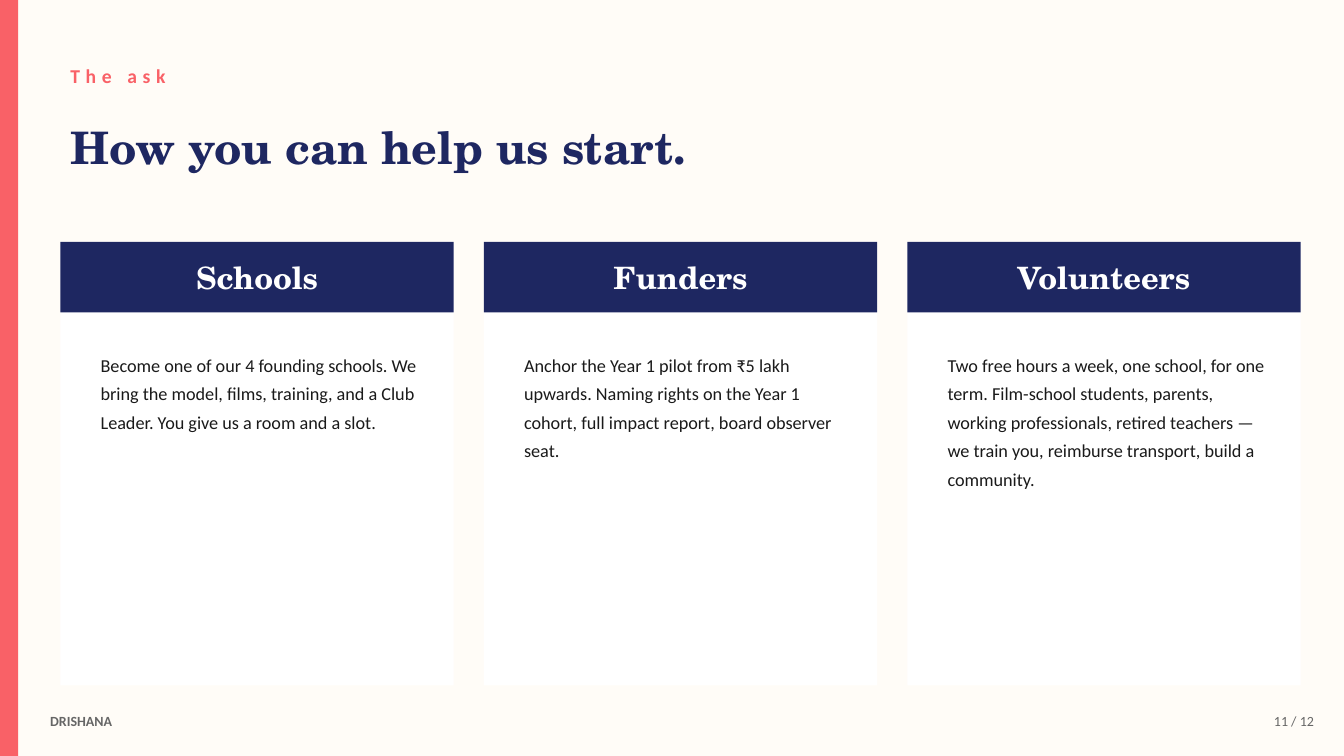
from pptx import Presentation
from pptx.dml.color import RGBColor
from pptx.enum import shapes, text
from pptx.util import Inches, Pt

CORAL, NAVY, WHITE, CREAM = "F96167", "1E2761", "FFFFFF", "FFFCF7"
INK, GREY = "1A1A1A", "666666"
SERIF, SANS = "TeX Gyre Schola", "Calibri"
WIDTH, HEIGHT = 13.33, 7.5

EYEBROW = {"name": SANS, "size": Pt(14), "bold": True, "color": CORAL}
TITLE = {"name": SERIF, "size": Pt(32), "bold": True, "color": NAVY}
CARD_HEAD = {"name": SERIF, "size": Pt(22), "bold": True, "color": WHITE}
CARD_BODY = {"name": SANS, "size": Pt(13), "color": INK}
FOOTER = {"name": SANS, "size": Pt(10), "color": GREY}

ASKS = [
    ("Schools", "Become one of our 4 founding schools. We bring the model, films, "
     "training, and a Club Leader. You give us a room and a slot."),
    ("Funders", "Anchor the Year 1 pilot from ₹5 lakh upwards. Naming rights on the "
     "Year 1 cohort, full impact report, board observer seat."),
    ("Volunteers", "Two free hours a week, one school, for one term. Film-school "
     "students, parents, working professionals, retired teachers — we train you, "
     "reimburse transport, build a community."),
]


def paint(fill, color):
    fill.solid()
    fill.fore_color.rgb = RGBColor.from_string(color)


def add_panel(page, left, top, width, height, color):
    panel = page.shapes.add_shape(shapes.MSO_SHAPE.RECTANGLE, Inches(left), Inches(top),
                                  Inches(width), Inches(height))
    panel.shadow.inherit = False
    paint(panel.fill, color)
    panel.line.fill.background()


def add_text(page, left, top, width, height, words, style,
             anchor=text.MSO_ANCHOR.MIDDLE, align=text.PP_ALIGN.LEFT, spacing=None):
    """Place one wrapped paragraph and return its span."""
    box = page.shapes.add_textbox(Inches(left), Inches(top), Inches(width), Inches(height))
    box.text_frame.word_wrap = True
    box.text_frame.vertical_anchor = anchor
    para = box.text_frame.paragraphs[0]
    para.alignment = align
    para.line_spacing = spacing
    span = para.add_run()
    span.text = words
    for key, value in style.items():
        if key == "color":
            span.font.color.rgb = RGBColor.from_string(value)
        else:
            setattr(span.font, key, value)
    return span


def add_heading(page, left, top):
    eyebrow = add_text(page, left, top, 6, 0.5, "The ask", EYEBROW)
    eyebrow.font._element.set("spc", "400")
    add_text(page, left, top + 0.5, 12, 0.9, "How you can help us start.", TITLE)


def add_card(page, left, top, width, height, heading, body):
    band = 0.7
    add_panel(page, left, top, width, height, WHITE)
    add_panel(page, left, top, width, band, NAVY)
    add_text(page, left, top, width, band, heading, CARD_HEAD, align=text.PP_ALIGN.CENTER)
    add_text(page, left + 0.3, top + band + 0.3, width - 0.5, height - 1.4, body, CARD_BODY,
             anchor=text.MSO_ANCHOR.TOP, spacing=1.3)


def add_cards(page, left, top, width, height, gap):
    for index, (heading, body) in enumerate(ASKS):
        add_card(page, left + index * (width + gap), top, width, height, heading, body)


def add_footer(page, top, height):
    add_text(page, WIDTH - 1.2, top, 1, height, "11 / 12", FOOTER, align=text.PP_ALIGN.RIGHT)
    add_text(page, 0.4, top, 2, height, "DRISHANA", {**FOOTER, "bold": True})


def main():
    deck = Presentation()
    deck.slide_width, deck.slide_height = Inches(WIDTH), Inches(HEIGHT)
    page = deck.slides.add_slide(deck.slide_layouts[6])
    paint(page.background.fill, CREAM)
    add_panel(page, 0, 0, 0.18, HEIGHT, CORAL)
    add_heading(page, 0.6, 0.5)
    add_cards(page, 0.6, 2.4, 3.9, 4.4, gap=0.3)
    add_footer(page, 7, 0.3)
    deck.save("out.pptx")


if __name__ == "__main__":
    main()
